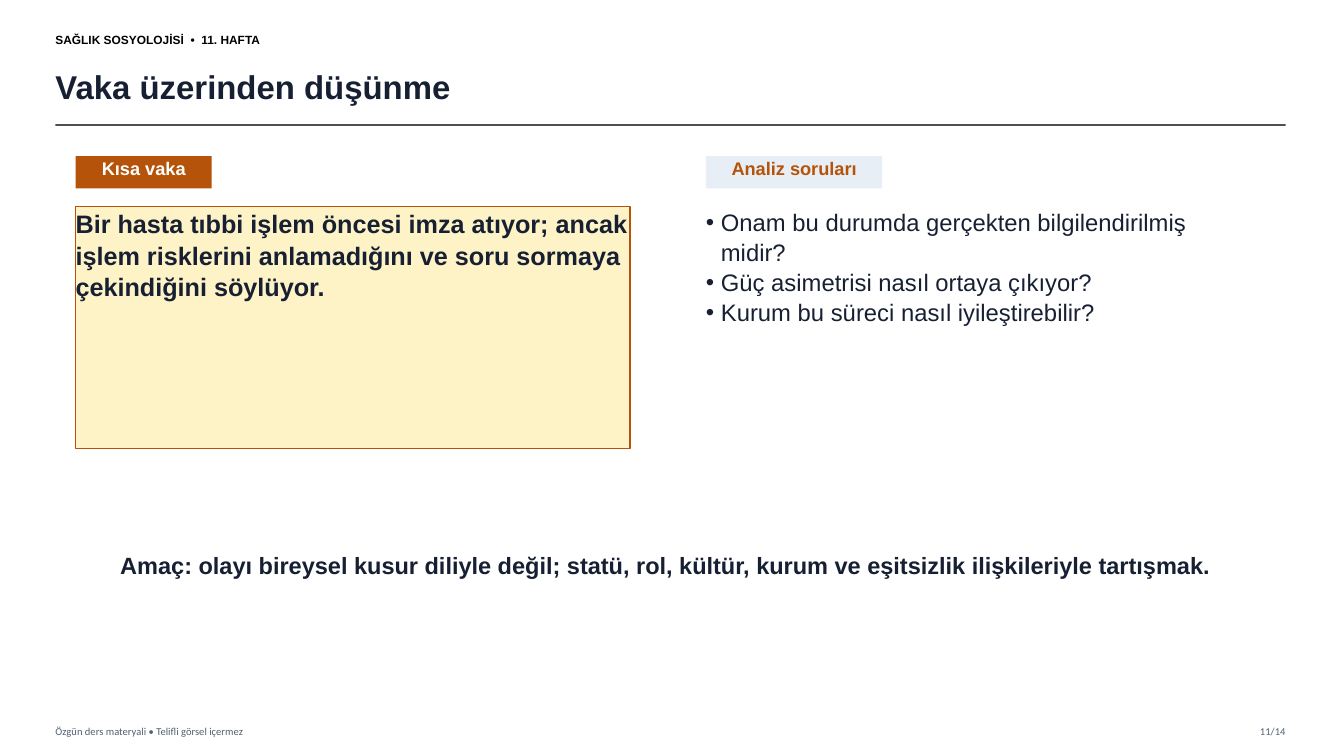
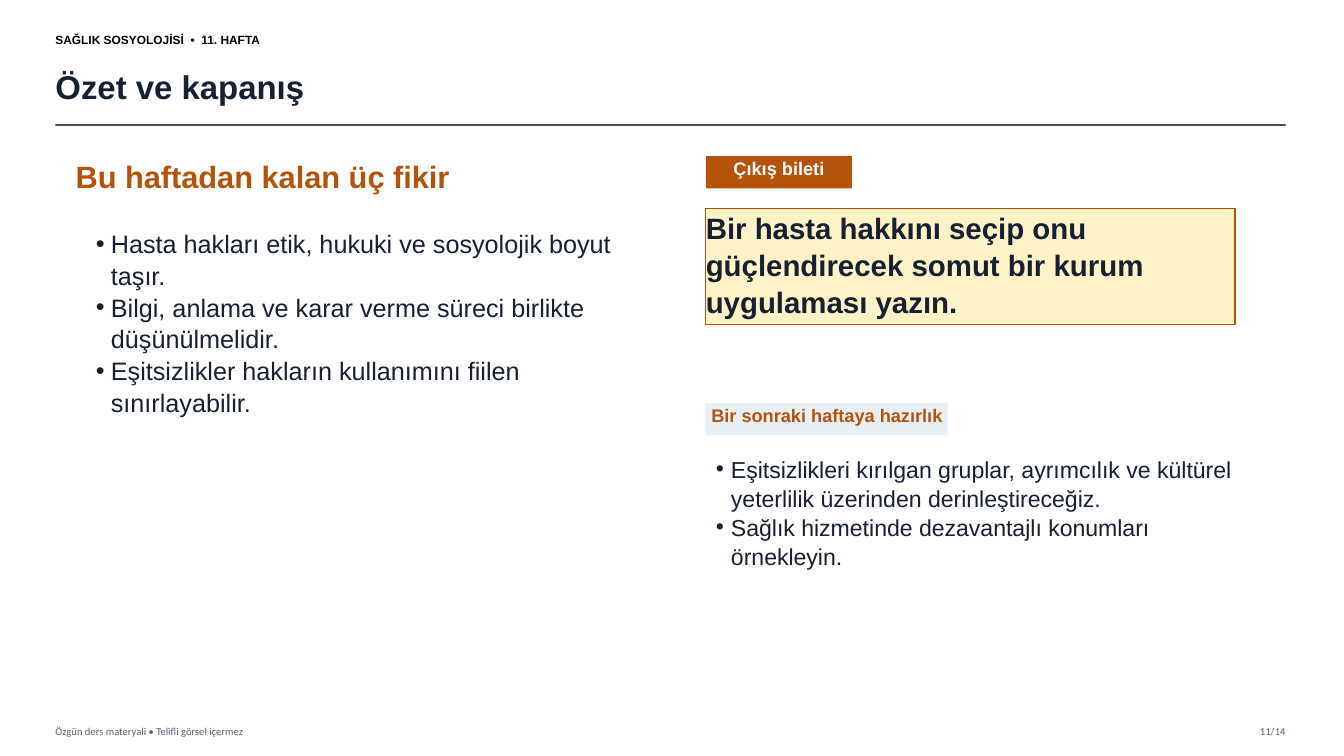
from dataclasses import dataclass

from lxml.etree import SubElement
from pptx import Presentation
from pptx.dml.color import RGBColor
from pptx.enum.shapes import MSO_CONNECTOR, MSO_SHAPE
from pptx.enum.text import MSO_ANCHOR, MSO_AUTO_SIZE, PP_ALIGN
from pptx.oxml.ns import qn
from pptx.shapes.autoshape import Shape
from pptx.slide import Slide
from pptx.util import Inches, Pt

HUES = {
    "ink": "172033",
    "rust": "B45309",
    "cream": "FEF3C7",
    "mist": "E8EEF5",
    "white": "FFFFFF",
    "black": "000000",
    "rule": "333333",
    "slate": "506070",
}
LEFT, RIGHT = 0.55, 12.75
COL_A, COL_B = 0.75, 7
TOP = 1.55
HANG = 0.15


@dataclass(frozen=True)
class Area:
    x: float
    y: float
    w: float
    h: float

    def emus(self) -> tuple[int, ...]:
        return tuple(Inches(v) for v in (self.x, self.y, self.w, self.h))


@dataclass(frozen=True)
class Badge:
    text: str
    x: float
    y: float
    w: float
    fill: str = "rust"
    ink: str = "white"


@dataclass(frozen=True)
class Card:
    text: str
    area: Area
    size: float


@dataclass(frozen=True)
class Points:
    items: tuple[str, ...]
    area: Area
    size: float


def tint(name: str) -> RGBColor:
    return RGBColor.from_string(HUES[name])


def write(shape: Shape, *lines: str, size: float, ink: str = "ink",
          bold: bool = False, face: str = "Arial", align: PP_ALIGN = PP_ALIGN.LEFT,
          anchor: MSO_ANCHOR = MSO_ANCHOR.TOP, pitch: float = 1.05,
          dots: bool = False) -> None:
    frame = shape.text_frame
    frame.word_wrap = True
    frame.auto_size = MSO_AUTO_SIZE.NONE
    frame.vertical_anchor = anchor
    frame.margin_left = frame.margin_right = 0
    frame.margin_top = frame.margin_bottom = 0
    frame.text = "\n".join(lines)
    for para in frame.paragraphs:
        para.alignment = align
        para.line_spacing = pitch
        para.space_before = para.space_after = Pt(0)
        if dots:
            props = para._p.get_or_add_pPr()
            props.set("marL", str(Inches(HANG)))
            props.set("indent", str(-Inches(HANG)))
            SubElement(props, qn("a:buFont"), typeface="Arial")
            SubElement(props, qn("a:buChar"), char="•")
        font = para.font
        font.name, font.size, font.bold = face, Pt(size), bold
        font.color.rgb = tint(ink)


def place(shape: Shape, area: Area) -> Shape:
    shape.left, shape.top, shape.width, shape.height = area.emus()
    return shape


def label(slide: Slide, text: str, area: Area, **style) -> None:
    write(slide.shapes.add_textbox(*area.emus()), text, **style)


def block(slide: Slide, area: Area, fill: str, edge: str | None = None) -> Shape:
    shape = slide.shapes.add_shape(MSO_SHAPE.RECTANGLE, *area.emus())
    shape.shadow.inherit = False
    shape.fill.solid()
    shape.fill.fore_color.rgb = tint(fill)
    if edge:
        shape.line.color.rgb = tint(edge)
        shape.line.width = Pt(1)
    else:
        shape.line.fill.background()
    return shape


def add_badge(slide: Slide, badge: Badge) -> None:
    shape = block(slide, Area(badge.x, badge.y, badge.w, 0.32), badge.fill)
    write(shape, badge.text, size=13, ink=badge.ink, bold=True, align=PP_ALIGN.CENTER)


def add_card(slide: Slide, card: Card) -> None:
    shape = block(slide, card.area, "cream", "rust")
    write(shape, card.text, size=card.size, bold=True)


def fill_list(slide: Slide, slot: int, points: Points) -> None:
    shape = place(slide.placeholders[slot], points.area)
    write(shape, *points.items, size=points.size, dots=True)


def add_rule(slide: Slide) -> None:
    y = Inches(1.24)
    rule = slide.shapes.add_connector(
        MSO_CONNECTOR.STRAIGHT, Inches(LEFT), y, Inches(RIGHT), y)
    rule.line.color.rgb = tint("rule")
    rule.line.width = Pt(1.2)
    props = rule._element.spPr
    SubElement(next(props.iter(qn("a:srgbClr"))), qn("a:alpha"), val="85000")
    SubElement(props, qn("a:effectLst"))


def start(deck: Presentation, layout: int, title: str) -> Slide:
    slide = deck.slides.add_slide(deck.slide_layouts[layout])
    mid = {"anchor": MSO_ANCHOR.MIDDLE, "pitch": 1.0}
    foot = {"size": 7.5, "ink": "slate", "face": "Calibri", **mid}
    label(slide, "SAĞLIK SOSYOLOJİSİ  •  11. HAFTA", Area(LEFT, 0.25, 3.6, 0.28),
          size=8.5, ink="black", bold=True, **mid)
    write(place(slide.shapes.title, Area(LEFT, 0.58, 11.95, 0.55)), title,
          size=23.5, bold=True, **mid)
    add_rule(slide)
    label(slide, "Özgün ders materyali • Telifli görsel içermez",
          Area(LEFT, 7.14, 6, 0.22), **foot)
    label(slide, "11/14", Area(RIGHT - 0.65, 7.14, 0.65, 0.22),
          align=PP_ALIGN.RIGHT, **foot)
    return slide


def add_case(deck: Presentation) -> None:
    slide = start(deck, 1, "Vaka üzerinden düşünme")
    add_badge(slide, Badge("Kısa vaka", COL_A, TOP, 1.35))
    add_card(slide, Card(
        "Bir hasta tıbbi işlem öncesi imza atıyor; ancak işlem risklerini "
        "anlamadığını ve soru sormaya çekindiğini söylüyor.",
        Area(COL_A, 2.05, 5.5, 2.4), 18))
    add_badge(slide, Badge("Analiz soruları", COL_B, TOP, 1.75, "mist", "rust"))
    fill_list(slide, 1, Points((
        "Onam bu durumda gerçekten bilgilendirilmiş midir?",
        "Güç asimetrisi nasıl ortaya çıkıyor?",
        "Kurum bu süreci nasıl iyileştirebilir?",
    ), Area(COL_B, 2.05, 5.4, 2.65), 17))
    label(slide,
          "Amaç: olayı bireysel kusur diliyle değil; statü, rol, kültür, kurum ve "
          "eşitsizlik ilişkileriyle tartışmak.",
          Area(1.05, 5.45, 11.1, 0.6), size=16.8, bold=True, align=PP_ALIGN.CENTER)


def add_close(deck: Presentation) -> None:
    slide = start(deck, 3, "Özet ve kapanış")
    label(slide, "Bu haftadan kalan üç fikir", Area(COL_A, TOP, 5.4, 0.45),
          size=22, ink="rust", bold=True)
    fill_list(slide, 1, Points((
        "Hasta hakları etik, hukuki ve sosyolojik boyut taşır.",
        "Bilgi, anlama ve karar verme süreci birlikte düşünülmelidir.",
        "Eşitsizlikler hakların kullanımını fiilen sınırlayabilir.",
    ), Area(0.95, 2.25, 5.5, 2.4), 18))
    add_badge(slide, Badge("Çıkış bileti", COL_B, TOP, 1.45))
    add_card(slide, Card(
        "Bir hasta hakkını seçip onu güçlendirecek somut bir kurum uygulaması yazın.",
        Area(COL_B, 2.07, 5.25, 1.15), 21))
    add_badge(slide, Badge("Bir sonraki haftaya hazırlık", COL_B, 4, 2.4,
                           "mist", "rust"))
    fill_list(slide, 2, Points((
        "Eşitsizlikleri kırılgan gruplar, ayrımcılık ve kültürel yeterlilik "
        "üzerinden derinleştireceğiz.",
        "Sağlık hizmetinde dezavantajlı konumları örnekleyin.",
    ), Area(7.1, 4.5, 5.2, 1.35), 16.5))


def main() -> None:
    deck = Presentation()
    deck.slide_width, deck.slide_height = Inches(13.33), Inches(7.5)
    add_case(deck)
    add_close(deck)
    deck.save("out.pptx")


if __name__ == "__main__":
    main()
